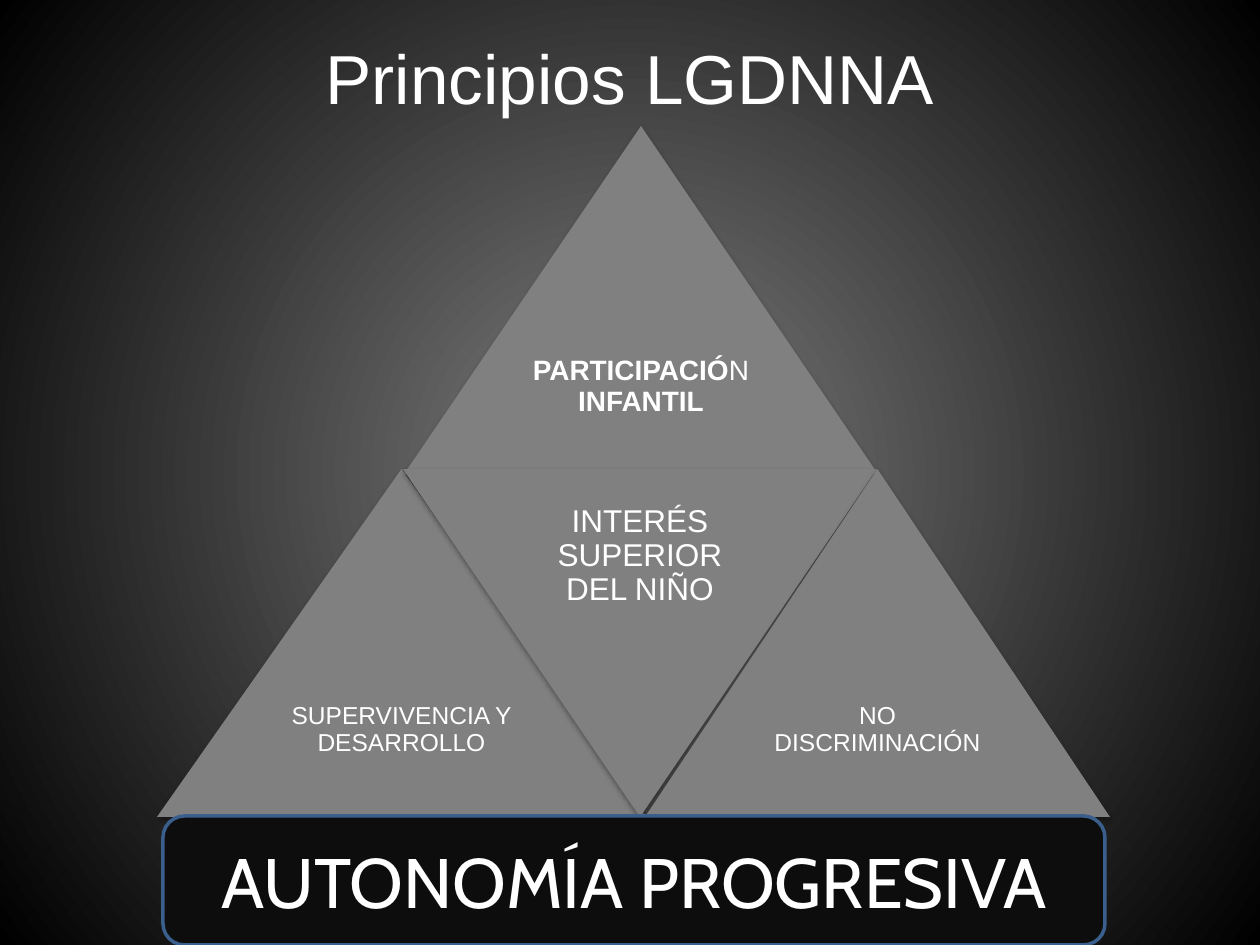
import pptx
import pptx.dml.color
import pptx.enum.shapes
import pptx.enum.text
import pptx.oxml
import pptx.oxml.ns
import pptx.util

NS = pptx.oxml.ns.nsdecls("a")
SHAPE = pptx.enum.shapes.MSO_SHAPE
PX = 914400 / 126  # EMU in one px


class Theme:
    glow, edge = "7F7F7F", "000000"
    triangle, bar, bar_line = "808080", "0D0D0D", "3A5F8C"
    text = "FFFFFF"
    font, bar_font = "Arial", "Cabin"
    title, bar_size = 39.6, 40
    small, medium, large = 14, 16, 18


def emu(*lengths):
    return [pptx.util.Emu(round(n * PX)) for n in lengths]


def rgb(value):
    return pptx.dml.color.RGBColor.from_string(value)


def assign(target, values):
    for name, value in values.items():
        setattr(target, name, value)


class Painter:
    def __init__(self, prs, theme):
        self.theme = theme
        self.slide = prs.slides.add_slide(prs.slide_layouts[6])

    def background(self):
        """Fill the slide with a gradient that darkens from its centre."""
        fill = self.slide.background.fill
        fill.gradient()
        for stop, color in zip(fill.gradient_stops, (self.theme.glow, self.theme.edge)):
            stop.color.rgb = rgb(color)
        lin = self.slide.element.find(".//" + pptx.oxml.ns.qn("a:lin"))
        lin.getparent().replace(lin, pptx.oxml.parse_xml(
            f'<a:path {NS} path="circle">'
            '<a:fillToRect l="50000" t="50000" r="50000" b="50000"/></a:path>'))

    def label(self, sp, runs, size, font=None, spacing=1.0, inset=None):
        """Give a shape one centred paragraph of (text, bold) runs."""
        tf = sp.text_frame
        assign(tf, {"word_wrap": True,
                    "vertical_anchor": pptx.enum.text.MSO_ANCHOR.MIDDLE})
        if inset is not None:
            margin, = emu(inset)
            sides = ("left", "top", "right", "bottom")
            assign(tf, {f"margin_{side}": margin for side in sides})
        p = tf.paragraphs[0]
        assign(p, {"alignment": pptx.enum.text.PP_ALIGN.CENTER,
                   "line_spacing": spacing})
        for text, bold in runs:
            r = p.add_run()
            r.text = text
            assign(r.font, {"name": font or self.theme.font, "bold": bold,
                            "size": pptx.util.Pt(size)})
            r.font.color.rgb = rgb(self.theme.text)

    def text(self, box, runs, size, **layout):
        sp = self.slide.shapes.add_textbox(*emu(*box))
        self.label(sp, runs, size, **layout)

    def shape(self, kind, box, fill, line=None):
        sp = self.slide.shapes.add_shape(kind, *emu(*box))
        sp.shadow.inherit = False
        sp.fill.solid()
        sp.fill.fore_color.rgb = rgb(fill)
        if line:
            sp.line.color.rgb = rgb(line)
            sp.line.width = pptx.util.Pt(2)
        else:
            sp.line.fill.background()
        return sp

    def shadow(self, sp):
        effects = sp.element.spPr.find(pptx.oxml.ns.qn("a:effectLst"))
        effects.append(pptx.oxml.parse_xml(
            f'<a:outerShdw {NS} blurRad="40000" dist="23000" dir="5400000" '
            'rotWithShape="0"><a:srgbClr val="000000"><a:alpha val="35000"/>'
            '</a:srgbClr></a:outerShdw>'))

    def triangle(self, box, runs, size, inset, inverted=False):
        """Draw a triangle with its label in the wide half."""
        sp = self.shape(SHAPE.ISOSCELES_TRIANGLE, box, self.theme.triangle)
        sp.rotation = 180 if inverted else 0
        self.shadow(sp)
        x, y, w, h = box
        wide_half = (x + w / 4, y if inverted else y + h / 2, w / 2, h / 2)
        self.text(wide_half, runs, size, spacing=0.9, inset=inset)

    def bar(self, box, text):
        sp = self.shape(SHAPE.ROUNDED_RECTANGLE, box,
                        self.theme.bar, self.theme.bar_line)
        self.label(sp, [(text, False)], self.theme.bar_size,
                   font=self.theme.bar_font)


def main():
    prs = pptx.Presentation()
    prs.slide_width, prs.slide_height = emu(1260, 945)
    theme = Theme()
    painter = Painter(prs, theme)
    painter.background()
    painter.text((63, 38, 1134, 77), [("Principios LGDNNA", False)], theme.title)

    top, middle, height = 126, 469, 348
    painter.triangle((404, top, 474, height),
                     [("PARTICIPACIÓ", True), ("N ", False), ("INFANTIL", True)],
                     theme.medium, 9)
    painter.triangle((157, middle, 489, height),
                     [("SUPERVIVENCIA Y DESARROLLO", False)], theme.small, 8)
    painter.triangle((403, middle, 474, height),
                     [("INTERÉS SUPERIOR DEL NIÑO", False)],
                     theme.large, 9, inverted=True)
    painter.triangle((645, middle, 465, height),
                     [("NO DISCRIMINACIÓN", False)], theme.small, 8)

    painter.bar((163, 816, 942, 129), "AUTONOMÍA PROGRESIVA")
    prs.save("out.pptx")


if __name__ == "__main__":
    main()
